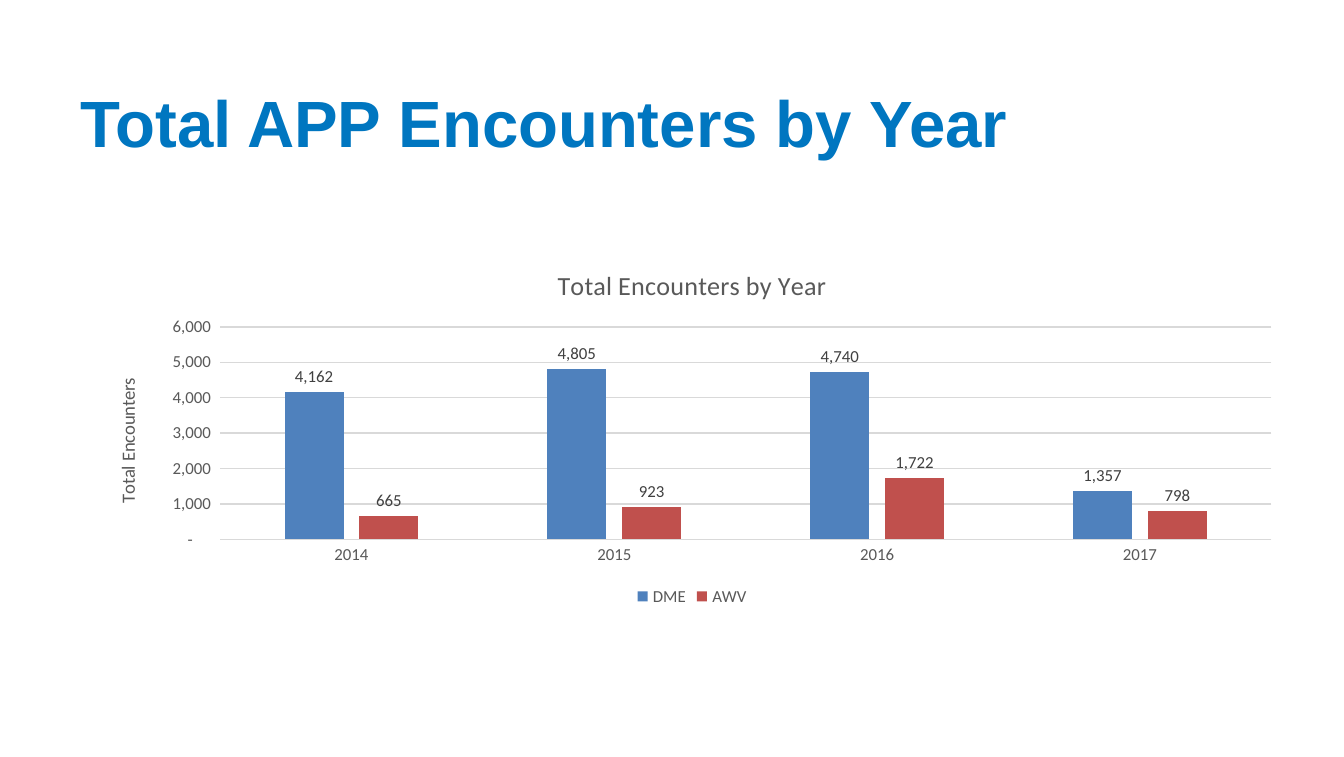
import pptx
import pptx.chart.data
import pptx.dml.color
import pptx.enum.chart
import pptx.enum.text
import pptx.util

YEARS = ["2014", "2015", "2016", "2017"]
ENCOUNTERS = {
    "DME": ([4162, 4805, 4740, 1357], "4F81BD"),
    "AWV": ([665, 923, 1722, 798], "C0504D"),
}
NUMBER_FORMAT = '_(* #,##0_);_(* \\(#,##0\\);_(* "-"??_);_('


def rgb(value):
    return pptx.dml.color.RGBColor.from_string(value)


class SlideBuilder:
    """Holds the style and the current slide; boxes are shares of its size."""

    heading_font, chart_font = "Arial", "Calibri"
    blue, grey, label_grey, rule_grey = "0076C0", "595959", "404040", "D9D9D9"

    def __init__(self, prs):
        self.prs = prs
        self.slide = prs.slides.add_slide(prs.slide_layouts[6])

    def place(self, x, y, w, h):
        width, height = self.prs.slide_width, self.prs.slide_height
        return [round(v) for v in (x * width, y * height, w * width, h * height)]

    def style_font(self, font, name, size, color, bold=False):
        font.name = name
        font.size = pptx.util.Pt(size)
        font.color.rgb = rgb(color)
        font.bold = bold

    def style_line(self, line):
        line.color.rgb = rgb(self.rule_grey)
        line.width = pptx.util.Pt(0.75)

    def title(self, text, *box):
        tf = self.slide.shapes.add_textbox(*self.place(*box)).text_frame
        tf.word_wrap = True
        tf.vertical_anchor = pptx.enum.text.MSO_ANCHOR.MIDDLE
        p = tf.paragraphs[0]
        p.text = text
        self.style_font(p.runs[0].font, self.heading_font, 35, self.blue, True)

    def chart_text(self, text_frame, text, size):
        p = text_frame.paragraphs[0]
        p.text = text
        self.style_font(p.runs[0].font, self.chart_font, size, self.grey)

    def column_chart(self, heading, axis_heading, categories, groups, *box):
        data = pptx.chart.data.CategoryChartData(number_format=NUMBER_FORMAT)
        data.categories = categories
        for name, (values, _) in groups.items():
            data.add_series(name, values)
        chart = self.slide.shapes.add_chart(
            pptx.enum.chart.XL_CHART_TYPE.COLUMN_CLUSTERED, *self.place(*box), data
        ).chart
        self.style_font(chart.font, self.chart_font, 10, "000000")
        self.chart_text(chart.chart_title.text_frame, heading, 14)
        chart.chart_title.include_in_layout = False

        chart.has_legend = True
        chart.legend.position = pptx.enum.chart.XL_LEGEND_POSITION.BOTTOM
        chart.legend.include_in_layout = False
        self.style_font(chart.legend.font, self.chart_font, 9, self.grey)
        self.axes(chart, axis_heading)
        self.columns(chart.plots[0], [color for _, color in groups.values()])

    def axes(self, chart, heading):
        for axis in (chart.category_axis, chart.value_axis):
            axis.major_tick_mark = pptx.enum.chart.XL_TICK_MARK.NONE
            axis.minor_tick_mark = pptx.enum.chart.XL_TICK_MARK.NONE
            self.style_font(axis.tick_labels.font, self.chart_font, 9, self.grey)
        self.style_line(chart.category_axis.format.line)

        values = chart.value_axis
        values.minimum_scale, values.maximum_scale, values.major_unit = 0, 6000, 1000
        values.format.line.fill.background()
        values.has_major_gridlines = True
        self.style_line(values.major_gridlines.format.line)
        values.tick_labels.number_format = NUMBER_FORMAT
        values.tick_labels.number_format_is_linked = False
        self.chart_text(values.axis_title.text_frame, heading, 10)

    def columns(self, plot, colors):
        plot.gap_width, plot.overlap = 219, -27
        plot.vary_by_categories = False
        for series, color in zip(plot.series, colors):
            series.format.fill.solid()
            series.format.fill.fore_color.rgb = rgb(color)
            series.invert_if_negative = False
            labels = series.data_labels
            labels.show_value = True
            labels.position = pptx.enum.chart.XL_LABEL_POSITION.OUTSIDE_END
            labels.number_format = NUMBER_FORMAT
            labels.number_format_is_linked = False
            self.style_font(labels.font, self.chart_font, 9, self.label_grey)


def main():
    prs = pptx.Presentation()
    prs.slide_width = pptx.util.Inches(10)
    prs.slide_height = pptx.util.Inches(5.63)
    s = SlideBuilder(prs)
    s.title("Total APP Encounters by Year", 0.05, 0.11, 0.9, 0.1)
    s.column_chart("Total Encounters by Year", "Total Encounters", YEARS, ENCOUNTERS,
                   0.066, 0.327, 0.898, 0.481)
    prs.save("out.pptx")


if __name__ == "__main__":
    main()
